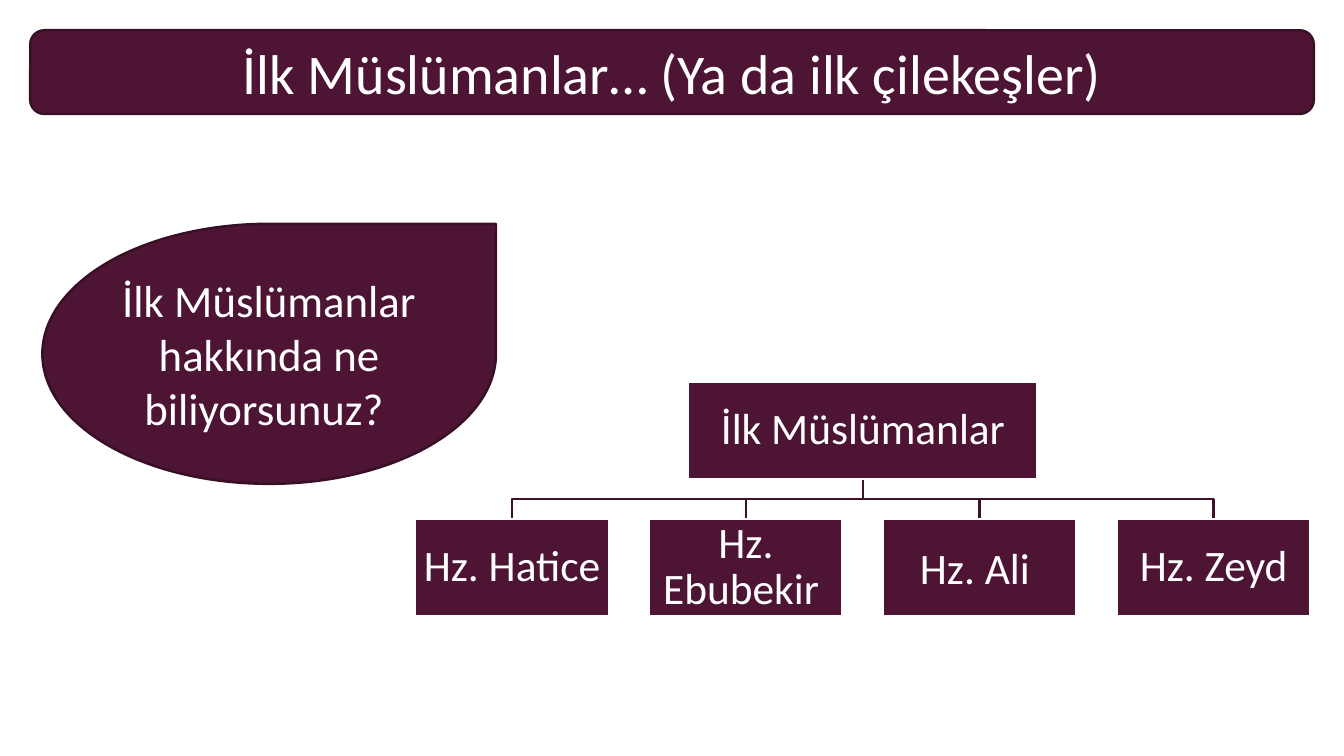
from dataclasses import dataclass

from pptx import Presentation
from pptx.dml.color import RGBColor
from pptx.enum.shapes import MSO_SHAPE
from pptx.enum.text import MSO_ANCHOR, PP_ALIGN
from pptx.util import Inches, Pt

ROUNDED = MSO_SHAPE.ROUNDED_RECTANGLE
TEARDROP = MSO_SHAPE.TEAR
RECTANGLE = MSO_SHAPE.RECTANGLE
MIDDLE = MSO_ANCHOR.MIDDLE
CENTER = PP_ALIGN.CENTER

SLIDE_W, SLIDE_H = Inches(13.33), Inches(7.5)


@dataclass(frozen=True)
class Theme:
    font: str = "Calibri"
    plum: RGBColor = RGBColor(0x4D, 0x14, 0x34)
    outline: RGBColor = RGBColor(0x39, 0x0F, 0x26)
    branch: RGBColor = RGBColor(0x3E, 0x10, 0x2A)
    white: RGBColor = RGBColor(0xFF, 0xFF, 0xFF)
    line_width: float = 1.75
    title_size: int = 40
    question_size: int = 32
    node_size: int = 31


THEME = Theme()

# Organisation chart, in percent of the slide's width and height
PEOPLE = [("Hz. Hatice", 0.9), ("Hz. Ebubekir ", 0.9), ("Hz. Ali ", None), ("Hz. Zeyd", 0.9)]
NODE_H = 12.8
ROOT_W, ROOT_TOP = 26, 50.55
PERSON_W, PERSON_TOP = 14.4, 68.67
FIRST_LEFT, PITCH = 30.9, 17.4


def across(percent):
    return round(SLIDE_W * percent / 100)


def down(percent):
    return round(SLIDE_H * percent / 100)


def write(shape, text, *, size, inset=None, spacing=None):
    """Put centred white text into a shape."""
    frame = shape.text_frame
    frame.word_wrap = True
    frame.vertical_anchor = MIDDLE
    if inset is not None:
        frame.margin_left = frame.margin_right = Inches(inset)
        frame.margin_top = frame.margin_bottom = Inches(inset)
    paragraph = frame.paragraphs[0]
    paragraph.alignment = CENTER
    if spacing is not None:
        paragraph.line_spacing = spacing
    run = paragraph.add_run()
    run.text = text
    run.font.name = THEME.font
    run.font.size = Pt(size)
    run.font.color.rgb = THEME.white


def add_panel(slide, kind, left, top, width, height, outline):
    """Add a plum shape placed in percent of the slide."""
    panel = slide.shapes.add_shape(
        kind, across(left), down(top), across(width), down(height))
    panel.shadow.inherit = False
    panel.fill.solid()
    panel.fill.fore_color.rgb = THEME.plum
    panel.line.color.rgb = outline
    panel.line.width = Pt(THEME.line_width)
    return panel


def add_node(slide, text, left, top, width, spacing=0.9):
    node = add_panel(slide, RECTANGLE, left, top, width, NODE_H, THEME.white)
    write(node, text, size=THEME.node_size, inset=0.02, spacing=spacing)


def add_branch(slide, start_x, start_y, end_x, end_y):
    """Draw a stepped line from the root down to one person."""
    bus_y = (start_y + end_y) / 2
    outline = slide.shapes.build_freeform(across(start_x), down(start_y))
    steps = [(start_x, bus_y), (end_x, bus_y), (end_x, end_y)]
    outline.add_line_segments([(across(x), down(y)) for x, y in steps], close=False)
    branch = outline.convert_to_shape()
    branch.shadow.inherit = False
    branch.fill.background()
    branch.line.color.rgb = THEME.branch
    branch.line.width = Pt(THEME.line_width)


def add_organisation(slide):
    lefts = [FIRST_LEFT + PITCH * i for i in range(len(PEOPLE))]
    centers = [left + PERSON_W / 2 for left in lefts]
    root_center = (centers[0] + centers[-1]) / 2

    # Branches lie behind the boxes
    for center in reversed(centers):
        add_branch(slide, root_center, ROOT_TOP + NODE_H, center, PERSON_TOP)

    add_node(slide, "İlk Müslümanlar", root_center - ROOT_W / 2, ROOT_TOP, ROOT_W)
    for left, (person, spacing) in zip(lefts, PEOPLE):
        add_node(slide, person, left, PERSON_TOP, PERSON_W, spacing)


def main():
    deck = Presentation()
    deck.slide_width, deck.slide_height = SLIDE_W, SLIDE_H
    slide = deck.slides.add_slide(deck.slide_layouts[6])

    # Title bar
    title = add_panel(slide, ROUNDED, 2.25, 4, 95.5, 11.07, THEME.outline)
    write(title, "İlk Müslümanlar… (Ya da ilk çilekeşler)", size=THEME.title_size)

    # Opening question
    question = add_panel(slide, TEARDROP, 3.15, 29.6, 33.75, 34.4, THEME.outline)
    write(question, "İlk Müslümanlar hakkında ne biliyorsunuz? ", size=THEME.question_size)

    # The first Muslims
    add_organisation(slide)

    deck.save("out.pptx")


if __name__ == "__main__":
    main()
